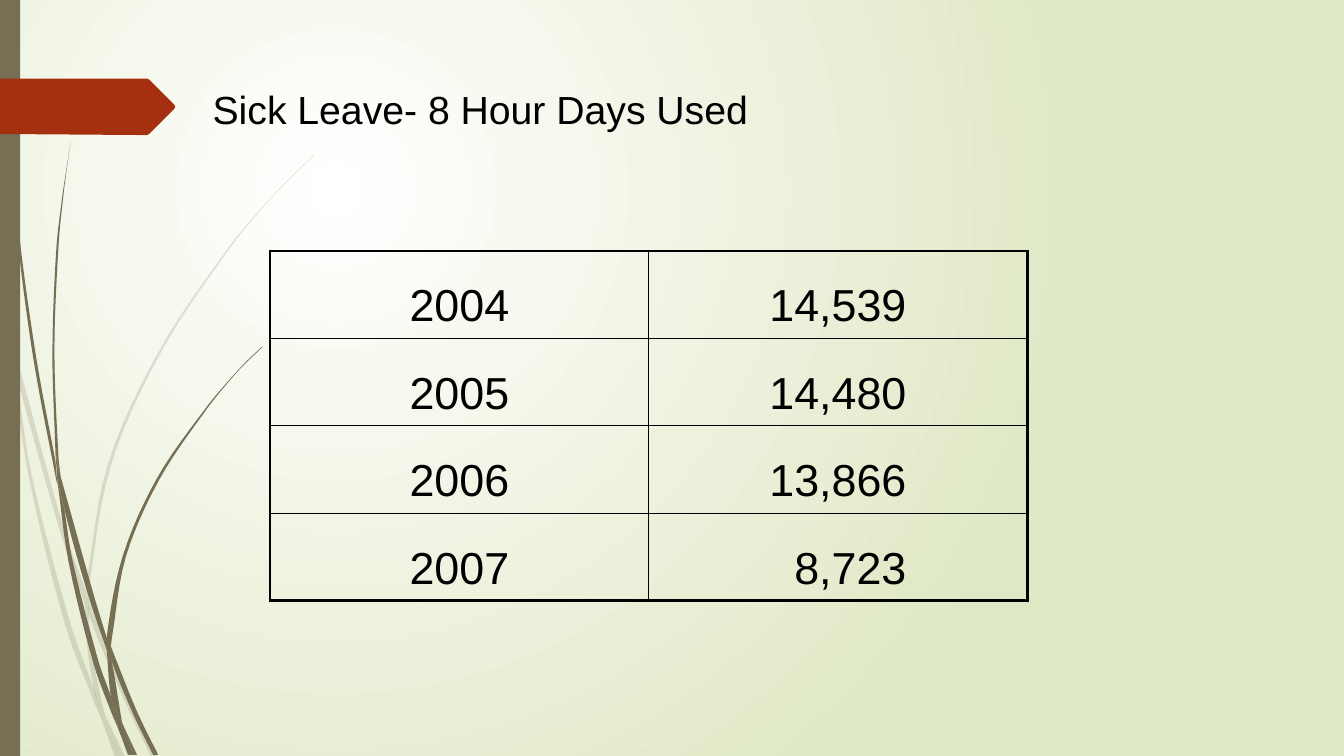
import dataclasses
import math

import lxml.etree
import pptx
import pptx.dml.color
import pptx.enum.shapes
import pptx.enum.text
import pptx.oxml.ns
import pptx.util

Pt = pptx.util.Pt
qn = pptx.oxml.ns.qn
Align = pptx.enum.text.PP_ALIGN


@dataclasses.dataclass
class Theme:
    font: str = "Arial"
    ink: str = "000000"
    glow: str = "FFFFFF"
    field: str = "DFE8C4"
    stem: str = "766F54"
    tag: str = "A53010"
    head: int = 28
    body: int = 32
    thick: float = 2.25
    thin: float = 1


@dataclasses.dataclass
class Box:
    left: float
    top: float
    width: float
    height: float

    def frame(self):
        return [Pt(v) for v in (self.left, self.top, self.width, self.height)]


THEME = Theme()
UNIT = 0.72
STEPS = 6

PALE = [
    ([(0, 282), (9, 322), (11, 350)], [(10, 344), (0, 299)]),
    ([(17, 376), (58, 522), (84, 599)], [(85, 586), (62, 520), (14, 345)]),
    ([(88, 596), (88, 610), (123, 694), (150, 751)], [(155, 751), (127, 692), (92, 607)]),
    ([(105, 711), (119, 751)], [(124, 751)]),
    ([(11, 350), (28, 470), (65, 621), (92, 693), (101, 714)],
     [(99, 707), (93, 683), (70, 619), (31, 469), (17, 376)]),
    ([(84, 599), (87, 646), (93, 683), (96, 692), (105, 711)],
     [(103, 706), (91, 646), (88, 610)]),
    ([(88, 596), (88, 584), (110, 462), (160, 349), (229, 245), (268, 198), (290, 175), (312, 154)],
     [(312, 153), (289, 175), (268, 197), (228, 244), (158, 348), (107, 461), (85, 584)]),
    ([(101, 714), (114, 751)], [(119, 751)]),
    ([(88, 596), (88, 610)], [(84, 599), (85, 586)]),
    ([(93, 683), (99, 707), (101, 714), (119, 751)], [(105, 711), (96, 692)]),
]

DARK = [
    ([(3, 0), (4, 48), (7, 110), (17, 233), (33, 355), (56, 477), (57, 481)],
     [(55, 457), (36, 355), (19, 232), (8, 109), (5, 48), (4, 0)]),
    ([(60, 472), (64, 505), (88, 592), (106, 645)], [(106, 633), (93, 590), (60, 472)]),
    ([(110, 641), (111, 656), (132, 708), (152, 749)], [(157, 749), (136, 706), (113, 649)]),
    ([(57, 477), (68, 557), (93, 659), (111, 708), (117, 722)],
     [(116, 717), (110, 691), (98, 657), (72, 556), (64, 505)]),
    ([(60, 472), (58, 453), (54, 349), (58, 245), (63, 193), (70, 141)],
     [(62, 193), (56, 245), (52, 349), (55, 449)]),
    ([(122, 719), (133, 749)], [(136, 749)]),
    ([(57, 477), (64, 505)], [(60, 472), (55, 449)]),
    ([(111, 633), (125, 552), (158, 476), (205, 406), (231, 374), (245, 359), (261, 344)],
     [(260, 344), (245, 358), (231, 373), (204, 405), (156, 474), (122, 551), (106, 631), (110, 641)]),
    ([(117, 722), (127, 749)], [(131, 749)]),
    ([(106, 645), (110, 691), (116, 706), (122, 719)], [(121, 716), (111, 656), (109, 651)]),
    ([(106, 645), (111, 656)], [(110, 641), (106, 631)]),
    ([(110, 691), (116, 717), (117, 722), (130, 749)], [(133, 749), (122, 719), (116, 706)]),
]

ARROW = [(173, 108), (148, 133), (146, 134), (136, 134), (0, 133), (0, 78),
         (146, 78), (148, 79), (173, 104), (174, 106)]

ROWS = [("2004", "14,539"), ("2005", "14,480"), ("2006", "13,866"), ("2007", "8,723")]


def tint(name):
    return pptx.dml.color.RGBColor.from_string(name)


def smooth(knots):
    def slope(i):
        a, b = knots[max(i - 1, 0)], knots[min(i + 1, len(knots) - 1)]
        span = sum(math.dist(knots[k], knots[k + 1])
                   for k in range(max(i - 1, 0), min(i + 1, len(knots) - 1)))
        return [(q - p) / span for p, q in zip(a, b)]

    curve = [knots[0]]
    for i, (a, b) in enumerate(zip(knots, knots[1:])):
        gap, out, into = math.dist(a, b), slope(i), slope(i + 1)
        for step in range(1, STEPS + 1):
            t = step / STEPS
            near = 1 - t * t * (3 - 2 * t)
            curve.append(tuple(
                near * p + (1 - near) * q + gap * (t * (1 - t) ** 2 * m - t * t * (1 - t) * n)
                for p, q, m, n in zip(a, b, out, into)))
    return curve


def paint(shape, color, alpha=100):
    shape.shadow.inherit = False
    shape.fill.solid()
    shape.fill.fore_color.rgb = tint(color)
    shape.line.fill.background()
    if alpha < 100:
        hue = shape.element.spPr.find(qn("a:solidFill"))[0]
        lxml.etree.SubElement(hue, qn("a:alpha"), val=str(alpha * 1000))


def trace(slide, box, points, color, alpha=100):
    spots = [(Pt(box.left + x * UNIT), Pt(box.top + y * UNIT)) for x, y in points]
    pen = slide.shapes.build_freeform(*spots[0])
    pen.add_line_segments(spots[1:], close=True)
    paint(pen.convert_to_shape(), color, alpha)


def style(para, size, align):
    para.alignment = align
    for run in para.runs:
        run.font.name = THEME.font
        run.font.size = Pt(size)
        run.font.bold = False
        run.font.color.rgb = tint(THEME.ink)


def ground(slide):
    fill = slide.background.fill
    fill.gradient()
    for stop, color in zip(fill.gradient_stops, (THEME.glow, THEME.field)):
        stop.color.rgb = tint(color)
    line = slide.element.xpath(".//a:lin")[0]
    ring = lxml.etree.Element(qn("a:path"), path="circle")
    lxml.etree.SubElement(ring, qn("a:fillToRect"), l="50000", t="50000", r="100000", b="100000")
    line.getparent().replace(line, ring)


def grass(slide, box):
    for group, alpha in ((PALE, 20), (DARK, 100)):
        for down, back in group:
            trace(slide, box, smooth(down) + smooth(back), THEME.stem, alpha)
    strip = Box(box.left, box.top, 14.4, box.height)
    kind = pptx.enum.shapes.MSO_SHAPE.RECTANGLE
    paint(slide.shapes.add_shape(kind, *strip.frame()), THEME.stem)
    trace(slide, box, ARROW, THEME.tag)


def title(slide, box, text):
    head = slide.shapes.title
    head.left, head.top, head.width, head.height = box.frame()
    frame = head.text_frame
    frame.text = text
    frame.word_wrap = True
    frame.auto_size = pptx.enum.text.MSO_AUTO_SIZE.NONE
    frame.vertical_anchor = pptx.enum.text.MSO_ANCHOR.BOTTOM
    frame.paragraphs[0].line_spacing = 1.25
    style(frame.paragraphs[0], THEME.head, Align.LEFT)


def edge(cell, side, width):
    line = lxml.etree.SubElement(cell._tc.get_or_add_tcPr(), qn("a:ln" + side), w=str(Pt(width)))
    fill = lxml.etree.SubElement(line, qn("a:solidFill"))
    lxml.etree.SubElement(fill, qn("a:srgbClr"), val=THEME.ink)


def grid(slide, box, rows):
    deep, wide = len(rows), len(rows[0])
    table = slide.shapes.add_table(deep, wide, *box.frame()).table
    table.first_row = table.horz_banding = False
    for r, row in enumerate(rows):
        table.rows[r].height = Pt(box.height / deep)
        for c, text in enumerate(row):
            table.columns[c].width = Pt(box.width / wide)
            cell = table.cell(r, c)
            cell.text_frame.text = text
            para = cell.text_frame.paragraphs[0]
            para.line_spacing = 1.5
            style(para, THEME.body, Align.RIGHT if c else Align.CENTER)
            if c:
                cell.margin_right = Pt(86.4)
            outer = {"L": c == 0, "R": c == wide - 1, "T": r == 0, "B": r == deep - 1}
            for side, rim in outer.items():
                edge(cell, side, THEME.thick if rim else THEME.thin)
            cell.fill.background()


def main():
    deck = pptx.Presentation()
    deck.slide_width, deck.slide_height = Pt(960), Pt(540)
    slide = deck.slides.add_slide(deck.slide_layouts[5])
    ground(slide)
    grass(slide, Box(0, 0, 230, 540))
    title(slide, Box(144.72, 25.2, 648, 72.72), "Sick Leave- 8 Hour Days Used")
    grid(slide, Box(192.96, 179.28, 541, 249.84), ROWS)
    deck.save("out.pptx")


if __name__ == "__main__":
    main()
